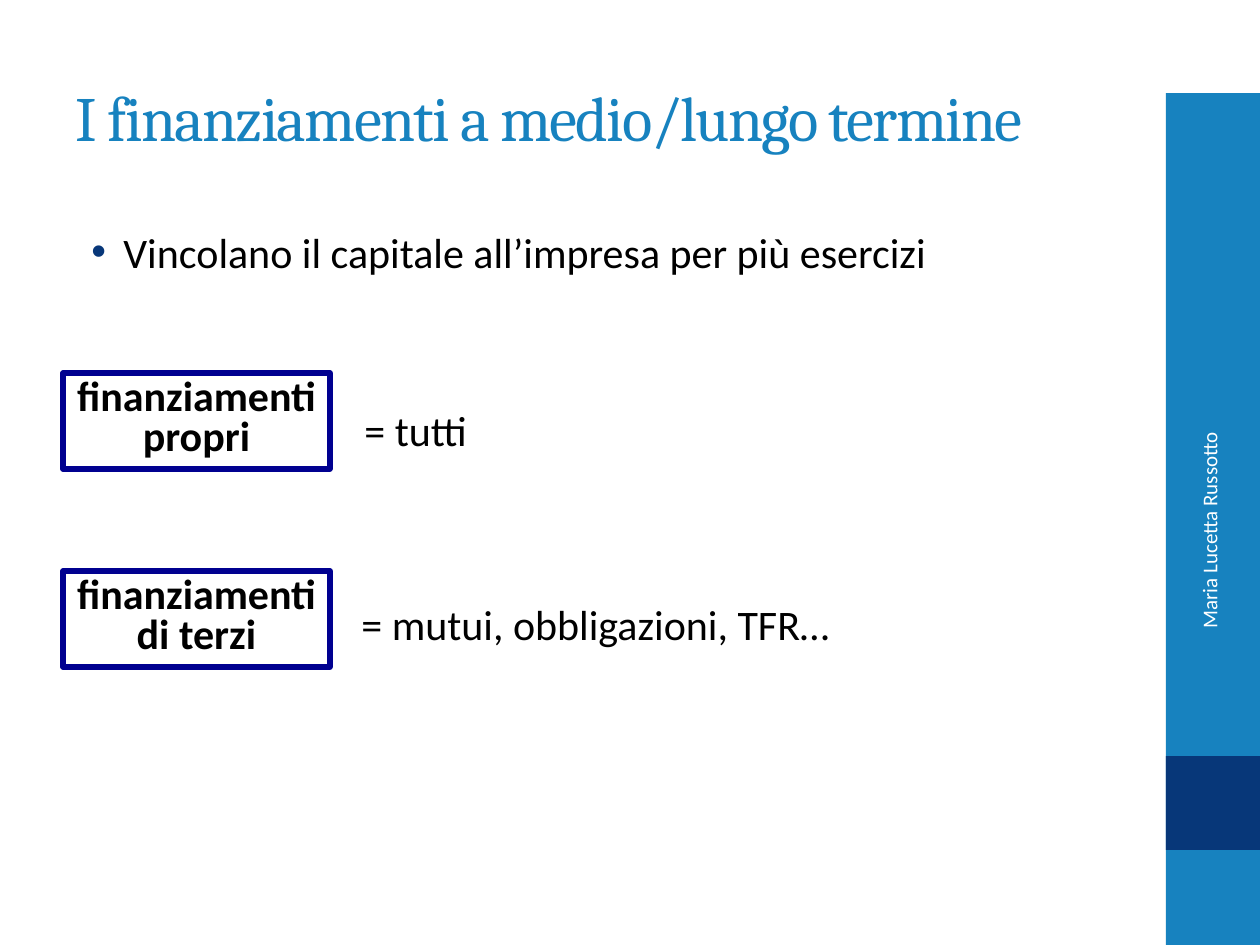
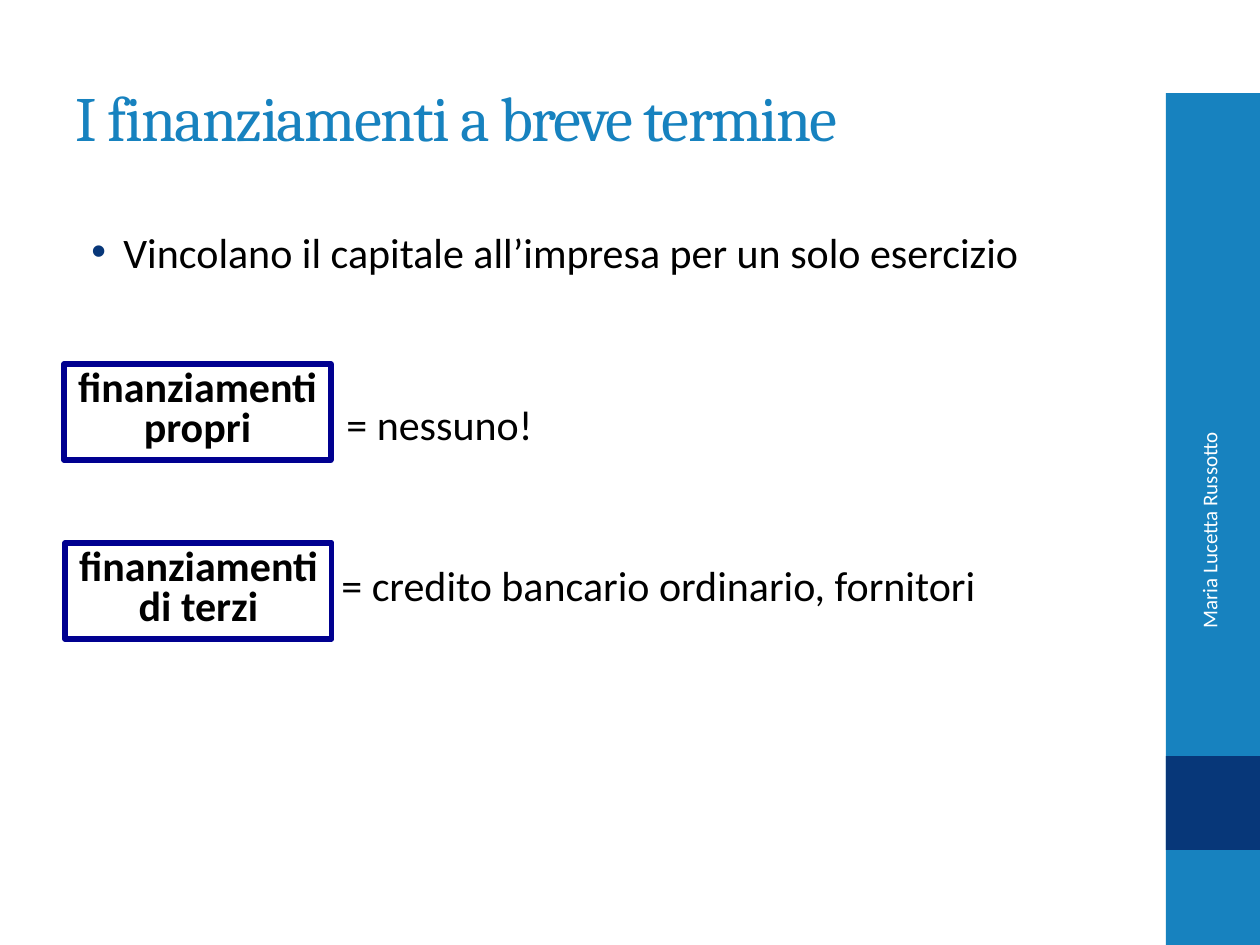
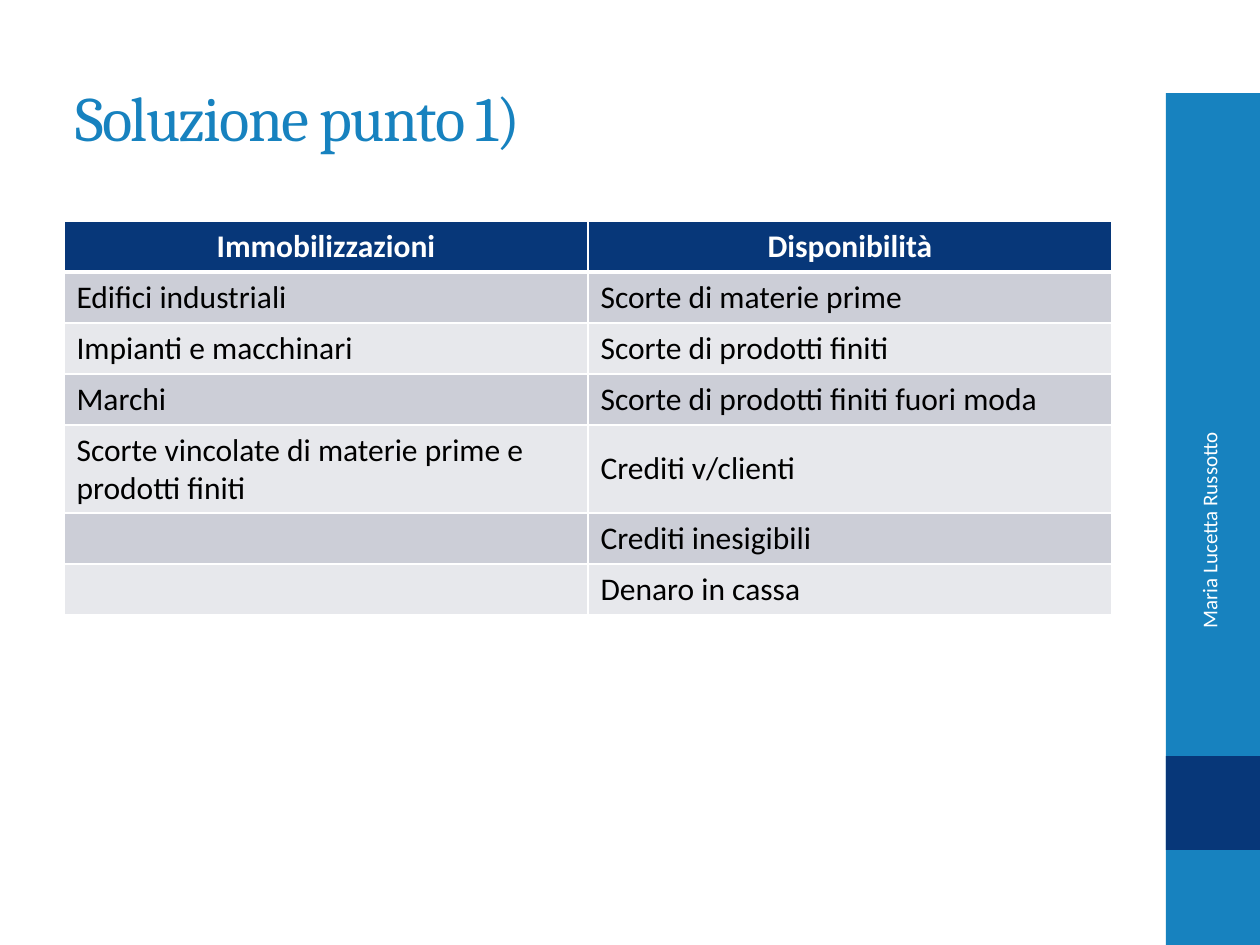
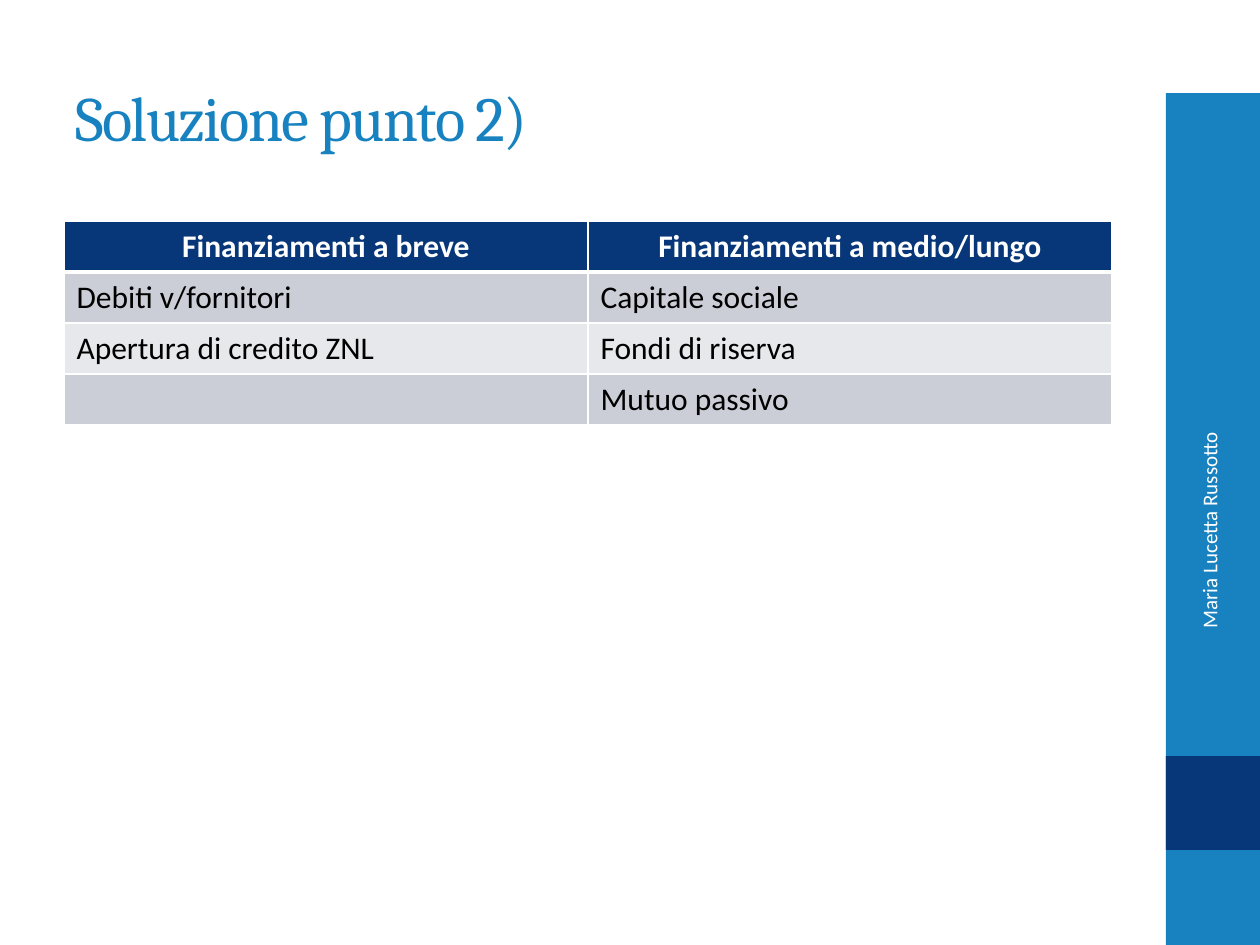
import pptx
import pptx.util
import pptx.dml.color
import pptx.enum.shapes
import pptx.enum.text
import pptx.oxml
import pptx.oxml.ns

RGBColor = pptx.dml.color.RGBColor
Pt = pptx.util.Pt
ALIGN = pptx.enum.text.PP_ALIGN
ANCHOR = pptx.enum.text.MSO_ANCHOR

BLUE = RGBColor(0x17, 0x82, 0xBF)
NAVY = RGBColor(0x07, 0x37, 0x79)
FRAME = RGBColor(0x00, 0x00, 0x90)
BLACK = RGBColor(0x00, 0x00, 0x00)
WHITE = RGBColor(0xFF, 0xFF, 0xFF)
ROW_FILLS = (RGBColor(0xCC, 0xCE, 0xD7), RGBColor(0xE7, 0xE8, 0xEC))

SCALE = 914400 / 126
LEFT, WIDTH = 63, 1050
ROW_HEIGHT = 51

TITLE = {"name": "Cambria", "size": Pt(36), "color": BLUE}
BODY = {"name": "Calibri", "size": Pt(24), "color": BLACK}
LABEL = {**BODY, "bold": True}
FOOTER = {"name": "Calibri", "size": Pt(12), "color": WHITE}
CELL = {"name": "Calibri", "size": Pt(18), "color": BLACK, "bold": False}
HEADER = {**CELL, "color": WHITE, "bold": True}


def px(*lengths):
    return [round(n * SCALE) for n in lengths]


def xml(parent, markup):
    ns = pptx.oxml.ns.nsdecls("a")
    parent.append(pptx.oxml.parse_xml(markup.replace(" ", f" {ns} ", 1)))


def set_format(font, fmt):
    for key, value in fmt.items():
        if key == "color":
            font.color.rgb = value
        else:
            setattr(font, key, value)


def write(tf, lines, fmt, align=ALIGN.LEFT, spacing=1.0):
    for i, line in enumerate(lines):
        p = tf.add_paragraph() if i else tf.paragraphs[0]
        p.alignment, p.line_spacing = align, spacing
        r = p.add_run()
        r.text = line
        set_format(r.font, fmt)


def add_text(s, box, text, fmt, anchor=ANCHOR.TOP, **layout):
    sp = s.shapes.add_textbox(*px(*box))
    tf = sp.text_frame
    tf.word_wrap, tf.vertical_anchor = True, anchor
    write(tf, [text], fmt, **layout)
    return sp


def add_rect(s, box):
    sp = s.shapes.add_shape(pptx.enum.shapes.MSO_SHAPE.RECTANGLE, *px(*box))
    sp.shadow.inherit = False
    return sp


def add_band(s, box, color):
    sp = add_rect(s, box)
    sp.fill.solid()
    sp.fill.fore_color.rgb = color
    sp.line.fill.background()


def add_slide(prs, title):
    s = prs.slides.add_slide(prs.slide_layouts[6])
    add_band(s, (1166, 93, 94, 852), BLUE)
    add_band(s, (1166, 756, 94, 94), NAVY)
    sp = add_text(s, (LEFT, 38, WIDTH, 157), title, TITLE, ANCHOR.MIDDLE)
    sp.text_frame.paragraphs[0].runs[0].font._element.set("spc", "-100")
    sp = add_text(s, (1046, 558, 326, 50), "Maria Lucetta Russotto", FOOTER,
                  ANCHOR.MIDDLE, align=ALIGN.RIGHT)
    sp.rotation = 270
    return s


def add_bullet(s, text):
    sp = add_text(s, (LEFT, 220, WIDTH, 662), text, BODY)
    pPr = sp.text_frame.paragraphs[0]._p.get_or_add_pPr()
    indent, = px(32)
    pPr.set("marL", str(px(48)[0]))
    pPr.set("indent", str(-indent))
    xml(pPr, f'<a:buClr ><a:srgbClr val="{NAVY}"/></a:buClr>')
    xml(pPr, '<a:buFont typeface="Arial"/>')
    xml(pPr, '<a:buChar char="•"/>')


def add_label(s, left, top, lines):
    sp = add_rect(s, (left, top, 267, 96))
    sp.fill.background()
    sp.line.color.rgb, sp.line.width = FRAME, Pt(3)
    tf = sp.text_frame
    tf.word_wrap, tf.vertical_anchor = False, ANCHOR.TOP
    write(tf, lines, LABEL, ALIGN.CENTER, 0.8)


def add_financing_slide(prs, title, bullet, groups):
    s = add_slide(prs, title)
    add_bullet(s, bullet)
    for kind, label_at, text, text_at, spacing in groups:
        add_text(s, (*text_at, 760, 60), text, BODY, spacing=spacing)
        add_label(s, *label_at, ["finanziamenti", kind])


def set_borders(cell, **widths):
    tcPr = cell._tc.get_or_add_tcPr()
    for side in "LRTB":
        w = Pt(widths.get(side, 1))
        xml(tcPr, f'<a:ln{side} w="{w}"><a:solidFill><a:srgbClr val="{WHITE}"/>'
                  f'</a:solidFill></a:ln{side}>')


def add_table(s, rows):
    box = (LEFT + 1, 221, WIDTH - 2, ROW_HEIGHT * len(rows))
    table = s.shapes.add_table(len(rows), 2, *px(*box)).table
    for i, row in enumerate(rows):
        table.rows[i].height, = px(ROW_HEIGHT)
        two_lines = any(len(text) > 45 for text in row)
        for j, text in enumerate(row):
            cell = table.cell(i, j)
            set_borders(cell, **({"B": 3}, {"T": 3}, {})[min(i, 2)])
            cell.fill.solid()
            cell.fill.fore_color.rgb = ROW_FILLS[(i - 1) % 2] if i else NAVY
            if two_lines and j:
                cell.vertical_anchor = ANCHOR.MIDDLE
            if text:
                write(cell.text_frame, [text], CELL if i else HEADER,
                      ALIGN.LEFT if i else ALIGN.CENTER)
            else:
                set_format(cell.text_frame.paragraphs[0].font, CELL)


def main():
    prs = pptx.Presentation()
    prs.slide_width, prs.slide_height = px(1260, 945)

    add_financing_slide(
        prs, "I finanziamenti a medio/lungo termine",
        "Vincolano il capitale all’impresa per più esercizi",
        [("di terzi", (63, 571), "= mutui, obbligazioni, TFR…", (349, 592), 1.0),
         ("propri", (63, 373), "= tutti", (352, 393), 1.1)])
    add_financing_slide(
        prs, "I finanziamenti a breve termine",
        "Vincolano il capitale all’impresa per un solo esercizio",
        [("di terzi", (65, 543), "= credito bancario ordinario, fornitori", (329, 567), 0.7),
         ("propri", (64, 364), "= nessuno!", (334, 387), 1.1)])

    add_table(add_slide(prs, "Soluzione punto 1)"), [
        ("Immobilizzazioni", "Disponibilità"),
        ("Edifici industriali", "Scorte di materie prime"),
        ("Impianti e macchinari", "Scorte di prodotti finiti"),
        ("Marchi", "Scorte di prodotti finiti fuori moda"),
        ("Scorte vincolate di materie prime e prodotti finiti", "Crediti v/clienti"),
        ("", "Crediti inesigibili"),
        ("", "Denaro in cassa"),
    ])
    add_table(add_slide(prs, "Soluzione punto 2)"), [
        ("Finanziamenti a breve", "Finanziamenti a medio/lungo"),
        ("Debiti v/fornitori", "Capitale sociale"),
        ("Apertura di credito ZNL", "Fondi di riserva"),
        ("", "Mutuo passivo"),
    ])
    prs.save("out.pptx")


if __name__ == "__main__":
    main()
